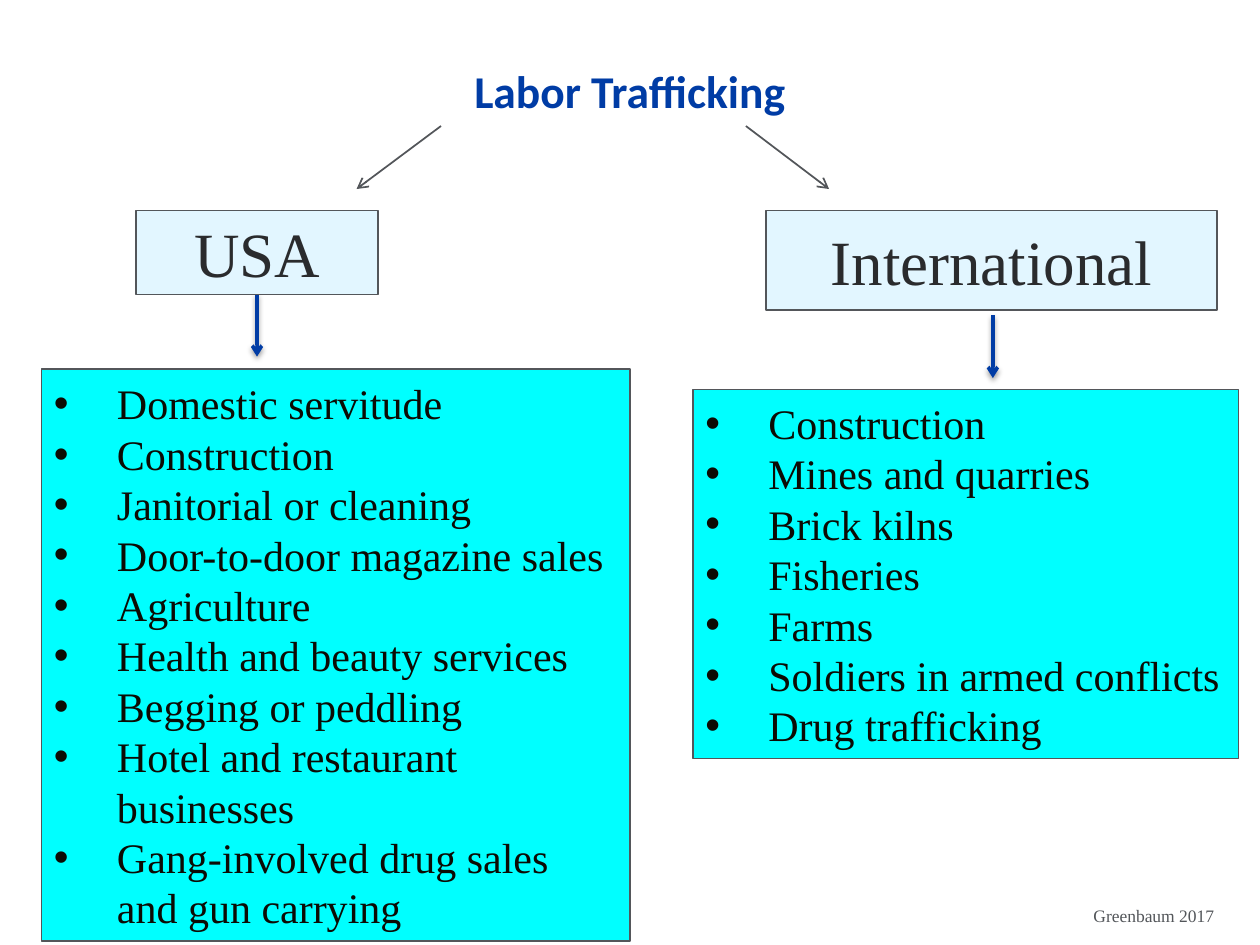
from lxml import etree
from pptx import Presentation
from pptx.dml.color import RGBColor
from pptx.enum import shapes, text
from pptx.oxml import parse_xml
from pptx.oxml.ns import qn
from pptx.util import Inches, Pt

NS = 'xmlns:a="http://schemas.openxmlformats.org/drawingml/2006/main"'
SHADOW = (f'<a:effectLst {NS}><a:outerShdw blurRad="39370" dist="20320" dir="5400000" '
          'rotWithShape="0"><a:srgbClr val="000000"><a:alpha val="38000"/></a:srgbClr>'
          '</a:outerShdw></a:effectLst>')
NO_SHADOW = f'<a:effectLst {NS}/>'
SERIF = "Times New Roman"
GREY, BLUE = "53565A", "003CA5"


def rgb(value):
    return RGBColor.from_string(value)


def add_text(box, lines, size, color, font=SERIF, fill=None, align=None):
    """Add a text box, or a bordered rectangle if fill is given; return its text frame."""
    pos = [Inches(v) for v in box]
    if fill:
        sp = s.shapes.add_shape(shapes.MSO_SHAPE.RECTANGLE, *pos)
        sp.shadow.inherit = False
        sp.fill.solid()
        sp.fill.fore_color.rgb = rgb(fill)
        sp.line.color.rgb = rgb(GREY)
        sp.line.width = Pt(0.75)
    else:
        sp = s.shapes.add_textbox(*pos)
    tf = sp.text_frame
    tf.word_wrap = True
    tf.vertical_anchor = text.MSO_ANCHOR.MIDDLE if fill else text.MSO_ANCHOR.TOP
    tf.text = "\n".join(lines)
    for p in tf.paragraphs:
        p.alignment = align or text.PP_ALIGN.LEFT
        for r in p.runs:
            r.font.name = font
            r.font.size = Pt(size)
            r.font.color.rgb = rgb(color)
    return tf


prs = Presentation()
prs.slide_width, prs.slide_height = Inches(10), Inches(7.5)
s = prs.slides.add_slide(prs.slide_layouts[6])
center = text.PP_ALIGN.CENTER

# Title
tf = add_text((0.5, 0.5, 9, 0.87), ["Labor Trafficking"], 26, BLUE, "Calibri", align=center)
tf.margin_left = tf.margin_right = tf.margin_top = tf.margin_bottom = 0
tf.paragraphs[0].runs[0].font.bold = True

# Arrows: from x, from y, to x, to y, colour, width, effect
arrows = [
    (3.5, 1, 2.83, 1.5, GREY, 1, NO_SHADOW),
    (5.92, 1, 6.58, 1.5, GREY, 1, NO_SHADOW),
    (2.04, 2.33, 2.04, 2.83, BLUE, 2, SHADOW),
    (7.88, 2.5, 7.88, 3, BLUE, 2, SHADOW),
]
for *ends, color, width, effect in arrows:
    cx = s.shapes.add_connector(shapes.MSO_CONNECTOR.STRAIGHT, *[Inches(v) for v in ends])
    cx.line.color.rgb = rgb(color)
    cx.line.width = Pt(width)
    etree.SubElement(cx.line._get_or_add_ln(), qn("a:tailEnd"), type="arrow")
    cx._element.spPr.append(parse_xml(effect))

# Headings
headings = [("USA", (1.08, 1.67, 1.92, 0.67)), ("International", (6.08, 1.67, 3.58, 0.79))]
for name, box in headings:
    add_text(box, [name], 36, "2A2B2D", fill="E2F6FF", align=center)

# Bulleted lists
lists = [
    ((0.33, 2.93, 4.67, 4.54),
     ["Domestic servitude", "Construction", "Janitorial or cleaning",
      "Door-to-door magazine sales", "Agriculture", "Health and beauty services",
      "Begging or peddling", "Hotel and restaurant businesses",
      "Gang-involved drug sales and gun carrying"]),
    ((5.5, 3.09, 4.33, 2.93),
     ["Construction", "Mines and quarries", "Brick kilns", "Fisheries", "Farms",
      "Soldiers in armed conflicts", "Drug trafficking"]),
]
for box, items in lists:
    tf = add_text(box, items, 24, "0C0B04", fill="00FFFF")
    for p in tf.paragraphs:
        p.line_spacing = Pt(28.8)
        pPr = p._p.get_or_add_pPr()
        pPr.set("marL", str(Inches(0.5)))
        pPr.set("indent", str(Inches(-0.5)))
        etree.SubElement(pPr, qn("a:buFont"), typeface="Arial")
        etree.SubElement(pPr, qn("a:buChar"), char="•")

# Source
add_text((8.58, 7.13, 1.42, 0.27), ["Greenbaum 2017"], 10, GREY)

prs.save("out.pptx")
